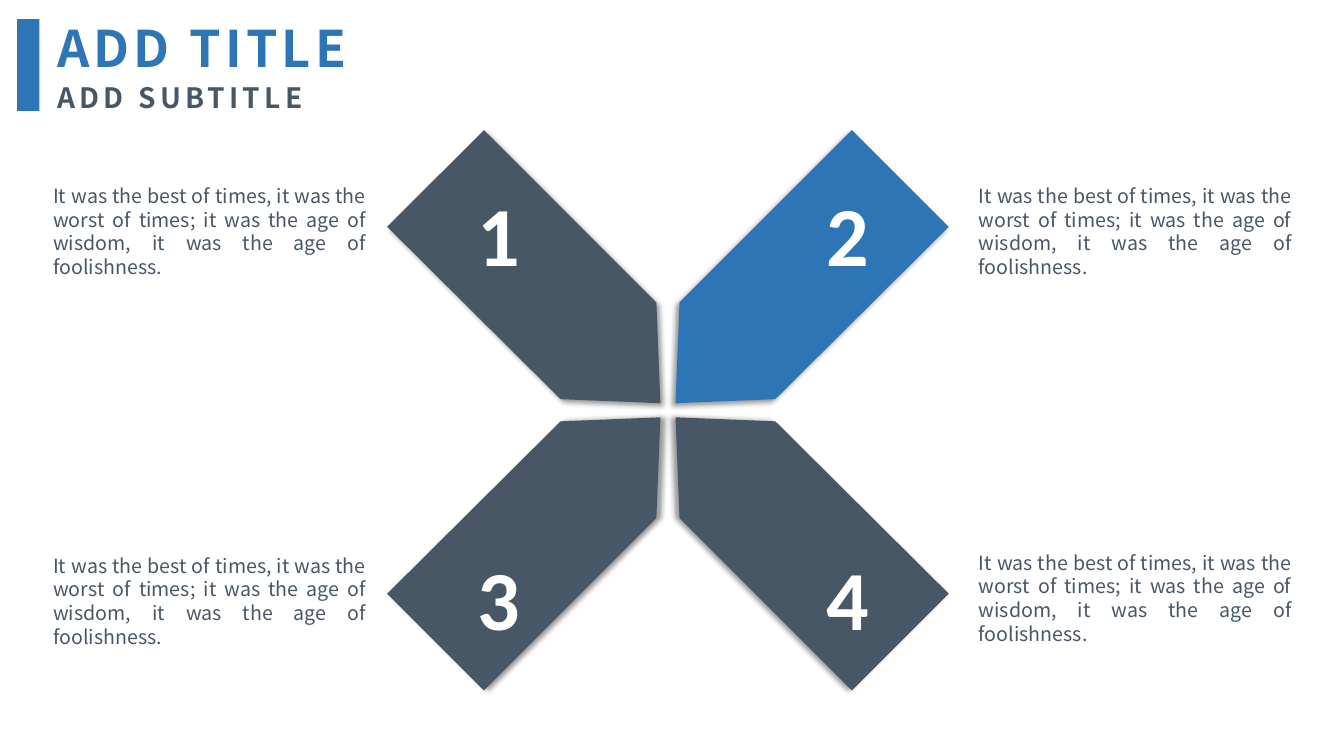
from lxml.etree import SubElement
from pptx import Presentation
from pptx.dml.color import RGBColor
from pptx.enum.shapes import MSO_SHAPE
from pptx.enum.text import PP_ALIGN
from pptx.oxml.ns import qn
from pptx.util import Inches, Pt

BLUE = RGBColor(0x2E, 0x75, 0xB6)
SLATE = RGBColor(0x48, 0x57, 0x66)
WHITE = RGBColor(0xFF, 0xFF, 0xFF)

CENTER_X, CENTER_Y = 6.625, 4.07
# Distances of the arm corners from the centre of the cross
ARM_CORNERS = [(0.115, 1.07), (0.075, 0.07), (1.065, 0.11), (2.785, 1.82), (1.825, 2.78)]

# number, horizontal side, vertical side, colour, shadow angle, caption top
ARMS = [
    ("1", -1, -1, SLATE, 45, 1.77),
    ("2", 1, -1, BLUE, 135, 1.77),
    ("3", -1, 1, SLATE, 0, 5.44),
    ("4", 1, 1, SLATE, 180, 5.41),
]
CAPTION = (
    "It was the best of times, it was the worst of times; "
    "it was the age of wisdom, it was the age of foolishness."
)


class SlideBuilder:
    number_font = "Calibri"
    text_font = "Noto Sans CJK SC"

    def __init__(self, slide):
        self.shapes = slide.shapes

    def paint(self, shape, color):
        shape.shadow.inherit = False
        shape.fill.solid()
        shape.fill.fore_color.rgb = color
        shape.line.fill.background()

    def bar(self, left, top, width, height, color):
        bar = self.shapes.add_shape(
            MSO_SHAPE.RECTANGLE, Inches(left), Inches(top), Inches(width), Inches(height)
        )
        self.paint(bar, color)

    def arm(self, side_x, side_y, color, shadow_angle):
        """Draw one arm of the cross, mirrored into its quarter of the slide."""
        corners = [
            (Inches(CENTER_X + side_x * dx), Inches(CENTER_Y + side_y * dy))
            for dx, dy in ARM_CORNERS
        ]
        outline = self.shapes.build_freeform(*corners[0])
        outline.add_line_segments(corners[1:], close=True)
        arm = outline.convert_to_shape()
        self.paint(arm, color)
        self.soft_shadow(arm, shadow_angle)

    def soft_shadow(self, shape, angle):
        effects = shape._element.spPr.find(qn("a:effectLst"))
        shadow = SubElement(
            effects, qn("a:outerShdw"), blurRad=str(Pt(4)), dist=str(Pt(3)),
            dir=str(angle * 60000), algn="ctr", rotWithShape="0",
        )
        black = SubElement(shadow, qn("a:srgbClr"), val="000000")
        SubElement(black, qn("a:alpha"), val="40000")

    def text(self, words, box, size, color, font=text_font, bold=False,
             align=PP_ALIGN.LEFT, line_height=None, tracking=None):
        frame = self.shapes.add_textbox(*map(Inches, box)).text_frame
        frame.word_wrap = True
        paragraph = frame.paragraphs[0]
        paragraph.alignment = align
        if line_height:
            paragraph.line_spacing = Pt(line_height)
        run = paragraph.add_run()
        run.text = words
        run.font.name = font
        run.font.size = Pt(size)
        run.font.bold = bold
        run.font.color.rgb = color
        if tracking:
            run.font._element.set("spc", str(tracking * 100))


def main():
    presentation = Presentation()
    presentation.slide_width = Inches(13.33)
    presentation.slide_height = Inches(7.5)
    builder = SlideBuilder(presentation.slides.add_slide(presentation.slide_layouts[6]))

    for number, side_x, side_y, color, shadow_angle, caption_top in ARMS:
        builder.arm(side_x, side_y, color, shadow_angle)
        number_box = (4.57 if side_x < 0 else 8.03, 1.76 if side_y < 0 else 5.37, 0.75, 1.11)
        builder.text(number, number_box, 60, WHITE, font=builder.number_font,
                     bold=True, align=PP_ALIGN.CENTER)
        caption_left = 0.43 if side_x < 0 else 9.61
        builder.text(CAPTION, (caption_left, caption_top, 3.3, 1.04), 14, SLATE,
                     align=PP_ALIGN.JUSTIFY, line_height=17)

    builder.text("ADD TITLE", (0.47, 0.1, 3.47, 0.71), 36, BLUE,
                 bold=True, line_height=45, tracking=3)
    builder.text("ADD SUBTITLE", (0.47, 0.74, 2.87, 0.44), 20, SLATE,
                 bold=True, line_height=25, tracking=3)
    builder.bar(0.17, 0.19, 0.22, 0.91, BLUE)

    presentation.save("out.pptx")


if __name__ == "__main__":
    main()
